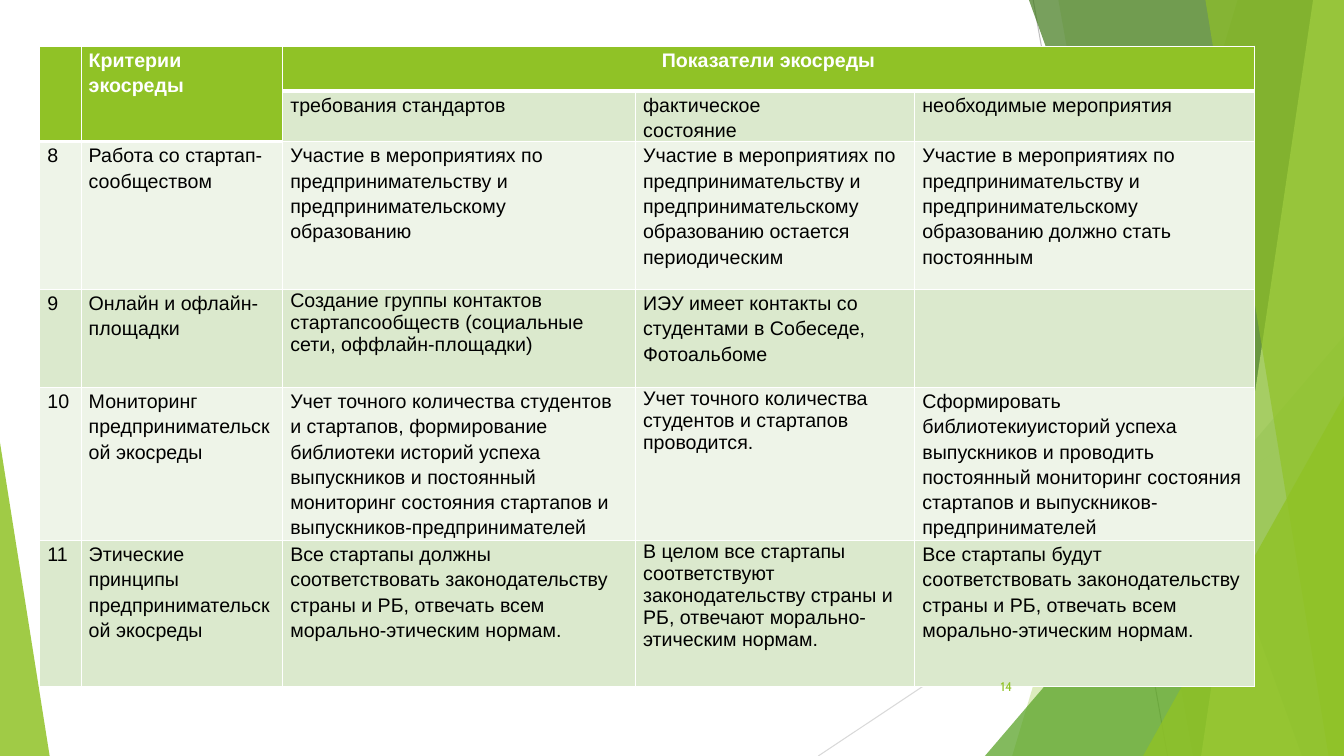
from lxml.etree import SubElement
from pptx import Presentation
from pptx.dml.color import RGBColor
from pptx.enum.shapes import MSO_CONNECTOR, MSO_SHAPE
from pptx.enum.text import MSO_ANCHOR, PP_ALIGN
from pptx.oxml.ns import qn
from pptx.util import Pt

W, H = 960, 540
COLORS = {
    "lime": "90C226", "green": "54A021", "forest": "3F7819", "pale": "C0E474",
    "band_dark": "DBE9CD", "band_light": "EEF4E8", "white": "FFFFFF",
    "black": "000000", "line_dark": "BFBFBF", "line_light": "D9D9D9",
}


def paint(sp, color, opacity):
    """Fill a shape with a see-through colour, without outline or shadow."""
    sp.shadow.inherit = False
    sp.line.fill.background()
    sp.fill.solid()
    sp.fill.fore_color.rgb = RGBColor.from_string(COLORS[color])
    clr = sp._element.spPr.find(qn("a:solidFill"))[0]
    SubElement(clr, qn("a:alpha"), val=str(opacity * 1000))


def set_borders(cell, bottom):
    """Draw white borders, 1 pt wide except for the bottom one."""
    tcPr = cell._tc.get_or_add_tcPr()
    for side, width in (("L", 1), ("R", 1), ("T", 1), ("B", bottom)):
        ln = SubElement(tcPr, qn(f"a:ln{side}"), w=str(Pt(width)))
        SubElement(SubElement(ln, qn("a:solidFill")), qn("a:srgbClr"), val=COLORS["white"])


prs = Presentation()
prs.slide_width, prs.slide_height = Pt(W), Pt(H)
s = prs.slides.add_slide(prs.slide_layouts[6])

# Thin background lines
for x1, y1, x2, y2, color in [
    (738, 0, 834, H, "line_dark"),
    (W, 290, 584.5, H, "line_light"),
]:
    cxn = s.shapes.add_connector(MSO_CONNECTOR.STRAIGHT, Pt(x1), Pt(y1), Pt(x2), Pt(y2))
    cxn.line.color.rgb = RGBColor.from_string(COLORS[color])
    cxn.line.width = Pt(0.75)
    SubElement(cxn._element.spPr, qn("a:effectLst"))

# Facets: a band runs from its top x to its bottom x and fills up to the right edge;
# a triangle stands on the bottom edge, given by left, top, width and apex position
for facet, color, opacity in [
    ((884, 723), "lime", 30),
    ((756, 852), "lime", 20),
    ((703.5, 240, 256.5, 1), "green", 72),
    ((735, 929.5), "forest", 70),
    ((938, 858), "pale", 70),
    ((861, 949), "lime", 65),
    ((816.5, 283, 143.5, 1), "lime", 80),
    ((0, 316, 35.5, 0), "lime", 85),
]:
    if len(facet) == 2:
        top_x, bottom_x = facet
        outline = s.shapes.build_freeform(top_x, 0, scale=Pt(1))
        outline.add_line_segments([(W, 0), (W, H), (bottom_x, H)], close=True)
        sp = outline.convert_to_shape()
    else:
        left, top, width, apex = facet
        sp = s.shapes.add_shape(MSO_SHAPE.ISOSCELES_TRIANGLE,
                                Pt(left), Pt(top), Pt(width), Pt(H - top))
        sp.adjustments[0] = apex
    paint(sp, color, opacity)

# Table
EVENTS = "Участие в мероприятиях по предпринимательству и предпринимательскому образованию"
ETHICS = ("соответствовать законодательству страны и РБ, "
          "отвечать всем морально-этическим нормам.")
rows = [
    ["", "Критерии экосреды", "Показатели экосреды", "", ""],
    ["", "", "требования стандартов", "фактическое\nсостояние", "необходимые мероприятия"],
    ["8", "Работа со стартап-сообществом", EVENTS,
     f"{EVENTS} остается периодическим", f"{EVENTS} должно стать постоянным"],
    ["9", "Онлайн и офлайн-площадки",
     "Создание группы контактов стартапсообществ (социальные сети, оффлайн-площадки)",
     "ИЭУ имеет контакты со студентами в Собеседе, Фотоальбоме", ""],
    ["10", "Мониторинг предпринимательской экосреды",
     "Учет точного количества студентов и стартапов, формирование библиотеки историй "
     "успеха выпускников и постоянный мониторинг состояния стартапов и "
     "выпускников-предпринимателей",
     "Учет точного количества студентов и стартапов проводится.",
     "Сформировать библиотекиуисторий успеха выпускников и проводить постоянный "
     "мониторинг состояния стартапов и выпускников-предпринимателей"],
    ["11", "Этические принципы предпринимательской экосреды",
     f"Все стартапы должны {ETHICS}",
     "В целом все стартапы соответствуют законодательству страны и РБ, "
     "отвечают морально-этическим нормам.",
     f"Все стартапы будут {ETHICS}"],
]
col_widths = [29.5, 144, 252, 199.5, 242.5]
row_heights = [32, 36, 105.5, 70, 109.5, 104]
single_spaced = {(3, 2), (4, 3), (5, 3)}
margins = {"margin_left": Pt(5.4), "margin_right": Pt(5.4), "margin_top": 0, "margin_bottom": 0}

table = s.shapes.add_table(len(rows), len(col_widths), Pt(28.5), Pt(33),
                           Pt(sum(col_widths)), Pt(sum(row_heights))).table
for column, width in zip(table.columns, col_widths):
    column.width = Pt(width)
for row, height in zip(table.rows, row_heights):
    row.height = Pt(height)

for i, texts in enumerate(rows):
    for j, text in enumerate(texts):
        header = i == 0 or (i == 1 and j < 2)
        band = "band_dark" if i % 2 else "band_light"
        cell = table.cell(i, j)
        for name, value in margins.items():
            setattr(cell, name, value)
        set_borders(cell, 3 if header else 1)
        cell.fill.solid()
        cell.fill.fore_color.rgb = RGBColor.from_string(COLORS["lime" if header else band])
        cell.text = text
        for p in cell.text_frame.paragraphs:
            p.line_spacing = 1.0 if (i, j) in single_spaced else 1.15
            p.alignment = PP_ALIGN.CENTER if (i, j) == (0, 2) else PP_ALIGN.LEFT
            for name, value in {"name": "Arial", "size": Pt(14), "bold": header}.items():
                setattr(p.font, name, value)
            p.font.color.rgb = RGBColor.from_string(COLORS["white" if header else "black"])

for first, last in [((0, 0), (1, 0)), ((0, 1), (1, 1)), ((0, 2), (0, 4))]:
    table.cell(*first).merge(table.cell(*last))

# Slide number
tf = s.shapes.add_textbox(Pt(676), Pt(476), Pt(54), Pt(29)).text_frame
tf.word_wrap = True
tf.vertical_anchor = MSO_ANCHOR.MIDDLE
p = tf.paragraphs[0]
p.alignment = PP_ALIGN.RIGHT
r = p.add_run()
r.text = "14"
r.font.name, r.font.size = "Cabin", Pt(9)
r.font.color.rgb = RGBColor.from_string(COLORS["lime"])

prs.save("out.pptx")
